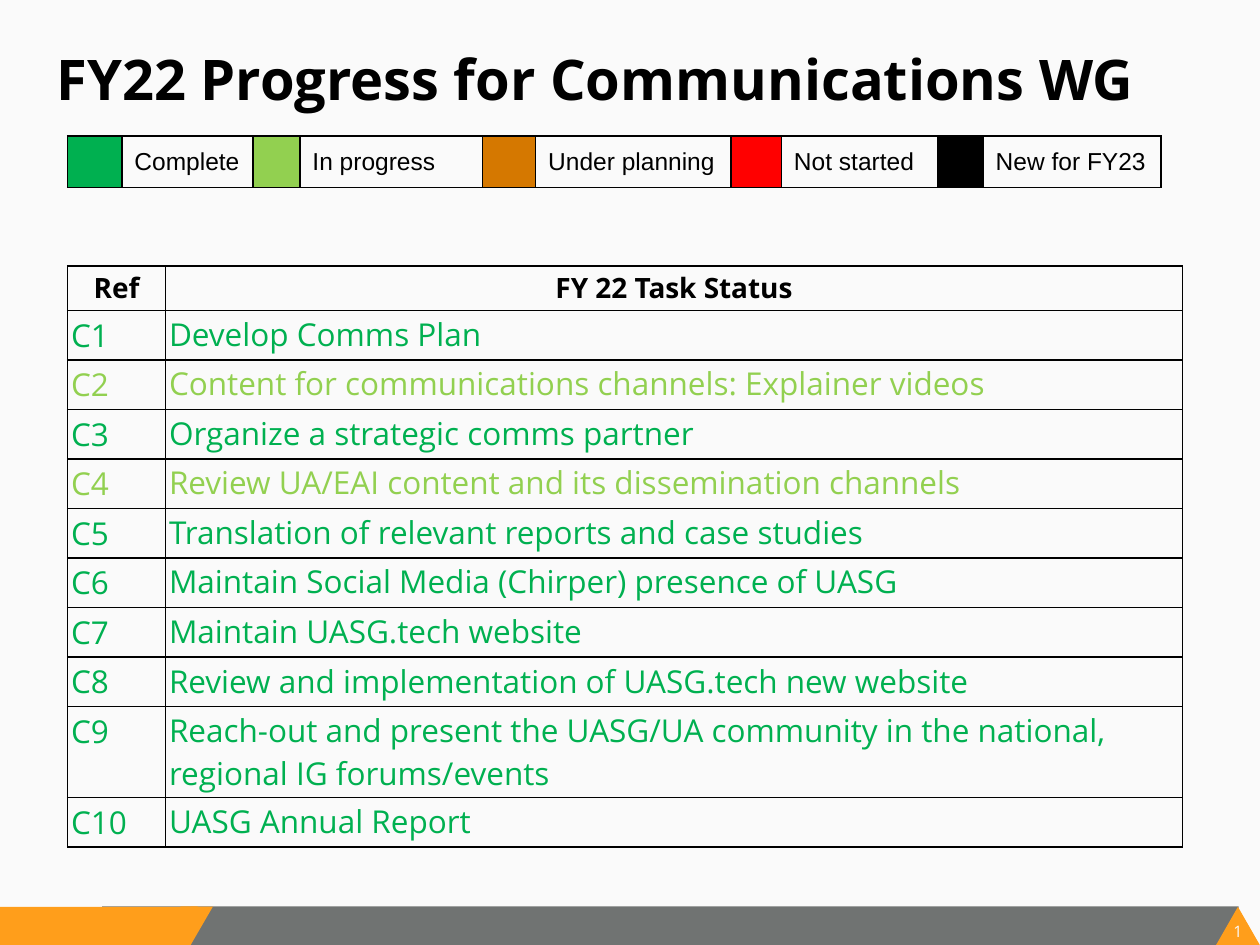
"""Build the communications working group progress slide."""
from dataclasses import dataclass

import pptx
import pptx.dml.color
import pptx.enum.shapes
import pptx.enum.text
import pptx.oxml
import pptx.oxml.ns
import pptx.util

Pt = pptx.util.Pt
SHAPES = pptx.enum.shapes.MSO_SHAPE
ALIGN = pptx.enum.text.PP_ALIGN
ANCHOR = pptx.enum.text.MSO_ANCHOR


@dataclass(frozen=True)
class Theme:
    """Colours, fonts and type sizes of the slide."""
    background: str = "FAFAFA"
    ink: str = "000000"
    bar: str = "707372"
    accent: str = "FF9E1B"
    complete: str = "00B050"
    in_progress: str = "92D050"
    planning: str = "D57800"
    not_started: str = "FF0000"
    font: str = "Open Sans"
    legend_font: str = "Arial"
    title_size: int = 32
    task_size: int = 18
    header_size: int = 16
    legend_size: int = 14
    number_size: int = 9


THEME = Theme()

LEGEND = [
    ("Complete", THEME.complete, 31, 75),
    ("In progress", THEME.in_progress, 26.8, 104.5),
    ("Under planning", THEME.planning, 30.2, 111.8),
    ("Not started", THEME.not_started, 28.7, 89.5),
    ("New for FY23", THEME.ink, 25.8, 101.6),
]

TASKS = [
    ("Develop Comms Plan", THEME.complete),
    ("Content for communications channels: Explainer videos", THEME.in_progress),
    ("Organize a strategic comms partner", THEME.complete),
    ("Review UA/EAI content and its dissemination channels", THEME.in_progress),
    ("Translation of relevant reports and case studies", THEME.complete),
    ("Maintain Social Media (Chirper) presence of UASG", THEME.complete),
    ("Maintain UASG.tech website", THEME.complete),
    ("Review and implementation of UASG.tech new website", THEME.complete),
    ("Reach-out and present the UASG/UA community in the national, "
     "regional IG forums/events", THEME.complete),
    ("UASG Annual Report", THEME.complete),
]


def rgb(colour):
    """Turn a hex string into a colour."""
    return pptx.dml.color.RGBColor.from_string(colour)


def write(frame, text, size, colour, font=THEME.font, bold=False, align=ALIGN.LEFT):
    """Write one run into the first paragraph of a text frame."""
    paragraph = frame.paragraphs[0]
    paragraph.alignment = align
    run = paragraph.add_run()
    run.text = text
    run.font.name = font
    run.font.size = Pt(size)
    run.font.bold = bold
    run.font.color.rgb = rgb(colour)


def set_margins(target, horizontal, vertical):
    """Set the insets of a text frame or a table cell."""
    target.margin_left = target.margin_right = Pt(horizontal)
    target.margin_top = target.margin_bottom = Pt(vertical)


def add_text(slide, box, margins, text, size, colour, **style):
    """Add a wrapping text box."""
    frame = slide.shapes.add_textbox(*map(Pt, box)).text_frame
    frame.word_wrap = True
    set_margins(frame, *margins)
    write(frame, text, size, colour, **style)


def add_block(slide, kind, box, colour, rotation=0, adjustment=None):
    """Add a flat, unlined shape."""
    shape = slide.shapes.add_shape(kind, *map(Pt, box))
    shape.shadow.inherit = False
    shape.fill.solid()
    shape.fill.fore_color.rgb = rgb(colour)
    shape.line.fill.background()
    shape.rotation = rotation
    if adjustment is not None:
        shape.adjustments[0] = adjustment


def add_borders(cell):
    """Draw a thin line on each side of a cell."""
    properties = cell._tc.get_or_add_tcPr()
    for side in "LRTB":
        properties.append(pptx.oxml.parse_xml(
            f'<a:ln{side} {pptx.oxml.ns.nsdecls("a")} w="{Pt(1)}"><a:solidFill>'
            f'<a:srgbClr val="{THEME.ink}"/></a:solidFill></a:ln{side}>'))


def add_grid(slide, left, top, widths, heights):
    """Add a bordered, unfilled table."""
    table = slide.shapes.add_table(
        len(heights), len(widths), Pt(left), Pt(top),
        Pt(sum(widths)), Pt(sum(heights))).table
    table.first_row = table.horz_banding = False
    for column, width in zip(table.columns, widths):
        column.width = Pt(width)
    for row, height in zip(table.rows, heights):
        row.height = Pt(height)
    for cell in table.iter_cells():
        add_borders(cell)
        cell.fill.background()
    return table


def add_legend(slide):
    """Add the row of status colours and their labels."""
    widths = [width for entry in LEGEND for width in entry[2:]]
    table = add_grid(slide, 38.6, 77.8, widths, [29.2])
    for index, (label, colour, *_) in enumerate(LEGEND):
        swatch, caption = table.cell(0, 2 * index), table.cell(0, 2 * index + 1)
        swatch.fill.solid()
        swatch.fill.fore_color.rgb = rgb(colour)
        caption.vertical_anchor = ANCHOR.MIDDLE
        set_margins(caption, 7.2, 3.6)
        write(caption.text_frame, label, THEME.legend_size, THEME.ink, THEME.legend_font)


def add_tasks(slide):
    """Add the task table, each task in the colour of its status."""
    heights = [25.4] + [52 if len(task) > 60 else 28.3 for task, _ in TASKS]
    table = add_grid(slide, 38.6, 152, [56, 581.2], heights)
    for column, heading in enumerate(("Ref", "FY 22 Task Status")):
        cell = table.cell(0, column)
        set_margins(cell, 2, 1.8)
        write(cell.text_frame, heading, THEME.header_size, THEME.ink,
              bold=True, align=ALIGN.CENTER)
    for row, (task, colour) in enumerate(TASKS, start=1):
        for column, (text, margin) in enumerate(((f"C{row}", 1.9), (task, 1.4))):
            cell = table.cell(row, column)
            set_margins(cell, 2, margin)
            write(cell.text_frame, text, THEME.task_size, colour)


def add_footer(slide):
    """Add the footer band and the page number."""
    add_block(slide, SHAPES.RECTANGLE, (58.3, 518, 649.5, 22), THEME.bar)
    add_block(slide, SHAPES.RECTANGLE, (0, 518.2, 108, 22), THEME.accent)
    add_block(slide, SHAPES.ISOSCELES_TRIANGLE, (694.8, 518.2, 25.2, 22), THEME.accent)
    add_text(slide, (701.3, 527, 12.2, 11), (0, 0), "1", THEME.number_size,
             THEME.background, align=ALIGN.CENTER)
    add_block(slide, SHAPES.PARALLELOGRAM, (96.5, 518, 25.2, 22), THEME.accent,
              rotation=180, adjustment=0.58)
    add_block(slide, SHAPES.RECTANGLE, (103, 518, 10, 9.4), THEME.accent)


def main():
    """Build and save the presentation."""
    presentation = pptx.Presentation()
    presentation.slide_width, presentation.slide_height = Pt(720), Pt(540)
    slide = presentation.slides.add_slide(presentation.slide_layouts[6])
    slide.background.fill.solid()
    slide.background.fill.fore_color.rgb = rgb(THEME.background)
    add_footer(slide)
    add_text(slide, (25.2, 21.6, 681, 90), (7.2, 3.6),
             "FY22 Progress for Communications WG", THEME.title_size, THEME.ink, bold=True)
    add_legend(slide)
    add_tasks(slide)
    presentation.save("out.pptx")


if __name__ == "__main__":
    main()
